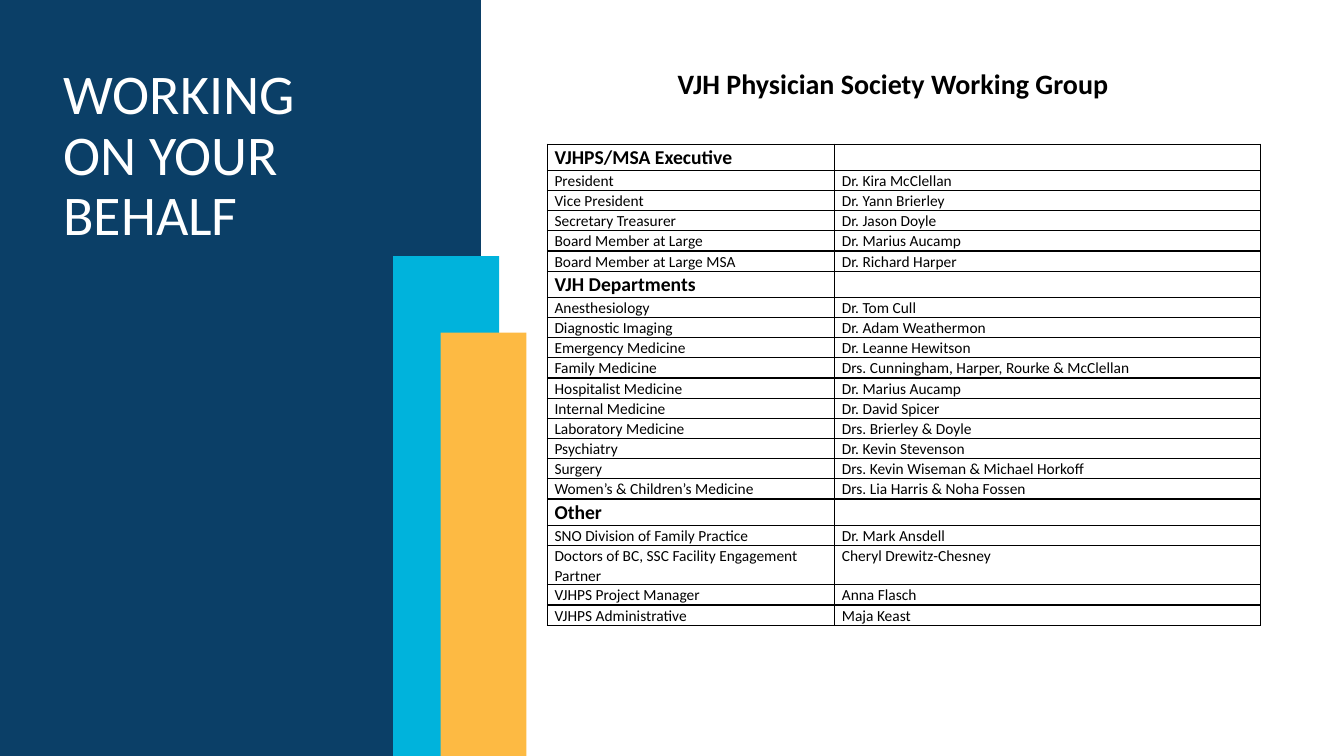
import lxml.etree
import pptx
import pptx.dml.color
import pptx.enum.shapes
import pptx.enum.text
import pptx.oxml.ns
import pptx.util

EMU_PER_PX = 9144  # 100 px to the inch

HEADINGS_AND_MEMBERS = {
    "VJHPS/MSA Executive": [
        ("President", "Dr. Kira McClellan"),
        ("Vice President", "Dr. Yann Brierley"),
        ("Secretary Treasurer", "Dr. Jason Doyle"),
        ("Board Member at Large", "Dr. Marius Aucamp"),
        ("Board Member at Large MSA", "Dr. Richard Harper"),
    ],
    "VJH Departments": [
        ("Anesthesiology", "Dr. Tom Cull"),
        ("Diagnostic Imaging", "Dr. Adam Weathermon"),
        ("Emergency Medicine", "Dr. Leanne Hewitson"),
        ("Family Medicine", "Drs. Cunningham, Harper, Rourke & McClellan"),
        ("Hospitalist Medicine", "Dr. Marius Aucamp"),
        ("Internal Medicine", "Dr. David Spicer"),
        ("Laboratory Medicine", "Drs. Brierley & Doyle"),
        ("Psychiatry", "Dr. Kevin Stevenson"),
        ("Surgery", "Drs. Kevin Wiseman & Michael Horkoff"),
        ("Women’s & Children’s Medicine", "Drs. Lia Harris & Noha Fossen"),
    ],
    "Other": [
        ("SNO Division of Family Practice", "Dr. Mark Ansdell"),
        ("Doctors of BC, SSC Facility Engagement Partner", "Cheryl Drewitz-Chesney"),
        ("VJHPS Project Manager", "Anna Flasch"),
        ("VJHPS Administrative", "Maja Keast"),
    ],
}


def px(length):
    return pptx.util.Emu(length * EMU_PER_PX)


def color(value):
    return pptx.dml.color.RGBColor.from_string(value)


def apply_format(target, values):
    for name, value in values.items():
        setattr(target, name, value)


class SlideBuilder:
    font_name = "Calibri"
    black = "000000"
    box_margin = 5
    cell_margin = 7

    def __init__(self, presentation):
        self.slide = presentation.slides.add_slide(presentation.slide_layouts[6])

    def rectangle(self, left, top, width, height, fill):
        shape = self.slide.shapes.add_shape(
            pptx.enum.shapes.MSO_SHAPE.RECTANGLE, *map(px, (left, top, width, height)))
        shape.shadow.inherit = False
        shape.fill.solid()
        shape.fill.fore_color.rgb = color(fill)
        shape.line.fill.background()

    def fill_paragraph(self, paragraph, text, size, ink, bold=False, **spacing):
        apply_format(paragraph, spacing)
        run = paragraph.add_run()
        run.text = text
        apply_format(run.font, {
            "name": self.font_name, "size": pptx.util.Pt(size), "bold": bold})
        run.font.color.rgb = color(ink)

    def text(self, left, top, width, height, text, size, ink, **style):
        shape = self.slide.shapes.add_textbox(*map(px, (left, top, width, height)))
        margin = px(self.box_margin)
        apply_format(shape.text_frame, {
            "word_wrap": True, "margin_left": margin, "margin_right": margin,
            "margin_top": margin, "margin_bottom": margin,
            "vertical_anchor": pptx.enum.text.MSO_ANCHOR.TOP})
        self.fill_paragraph(shape.text_frame.paragraphs[0], text, size, ink, **style)

    def cell(self, cell, text, size, bold):
        margin = px(self.cell_margin)
        apply_format(cell, {
            "margin_left": margin, "margin_right": margin,
            "margin_top": 0, "margin_bottom": 0})
        paragraph = cell.text_frame.paragraphs[0]
        if text:
            self.fill_paragraph(paragraph, text, size, self.black, bold,
                                line_spacing=1.07, space_after=pptx.util.Pt(8))
        else:
            # An empty cell needs its own text size to keep the row low
            lxml.etree.SubElement(paragraph._p, pptx.oxml.ns.qn("a:endParaRPr"),
                                  sz=str(size * 100))
        self.borders(cell)
        cell.fill.background()

    def borders(self, cell):
        properties = cell._tc.get_or_add_tcPr()
        for side in ("lnL", "lnR", "lnT", "lnB"):
            line = lxml.etree.SubElement(
                properties, pptx.oxml.ns.qn("a:" + side), w=str(pptx.util.Pt(1)))
            fill = lxml.etree.SubElement(line, pptx.oxml.ns.qn("a:solidFill"))
            lxml.etree.SubElement(fill, pptx.oxml.ns.qn("a:srgbClr"), val=self.black)

    def table(self, left, top, column_widths, groups):
        rows = []
        for heading, members in groups.items():
            rows.append((heading, "", 26, 14, True))
            rows += [(role, name, 20, 11, False) for role, name in members]
        table = self.slide.shapes.add_table(
            len(rows), len(column_widths), px(left), px(top),
            px(sum(column_widths)), px(sum(row[2] for row in rows))).table
        apply_format(table, {"first_row": False, "horz_banding": False})
        for column, width in zip(table.columns, column_widths):
            column.width = px(width)
        for row, (role, name, height, size, bold) in zip(table.rows, rows):
            row.height = px(height)
            for cell, text in zip(row.cells, (role, name)):
                self.cell(cell, text, size, bold)


def main():
    presentation = pptx.Presentation()
    presentation.slide_width, presentation.slide_height = px(1333), px(750)
    builder = SlideBuilder(presentation)

    # Colour panels
    builder.rectangle(0, 0, 477, 750, "0B3F67")
    builder.rectangle(390, 254, 105, 496, "00B3DC")
    builder.rectangle(437, 330, 85, 420, "FDBA43")

    # Title and table heading
    builder.text(58, 61, 299, 190, "WORKING ON YOUR BEHALF", 40, "FFFFFF",
                 line_spacing=0.9)
    builder.text(667, 61, 462, 44, "VJH Physician Society Working Group", 20,
                 builder.black, bold=True)

    # Working group members
    builder.table(543, 143, (285, 422), HEADINGS_AND_MEMBERS)

    presentation.save("out.pptx")


if __name__ == "__main__":
    main()
